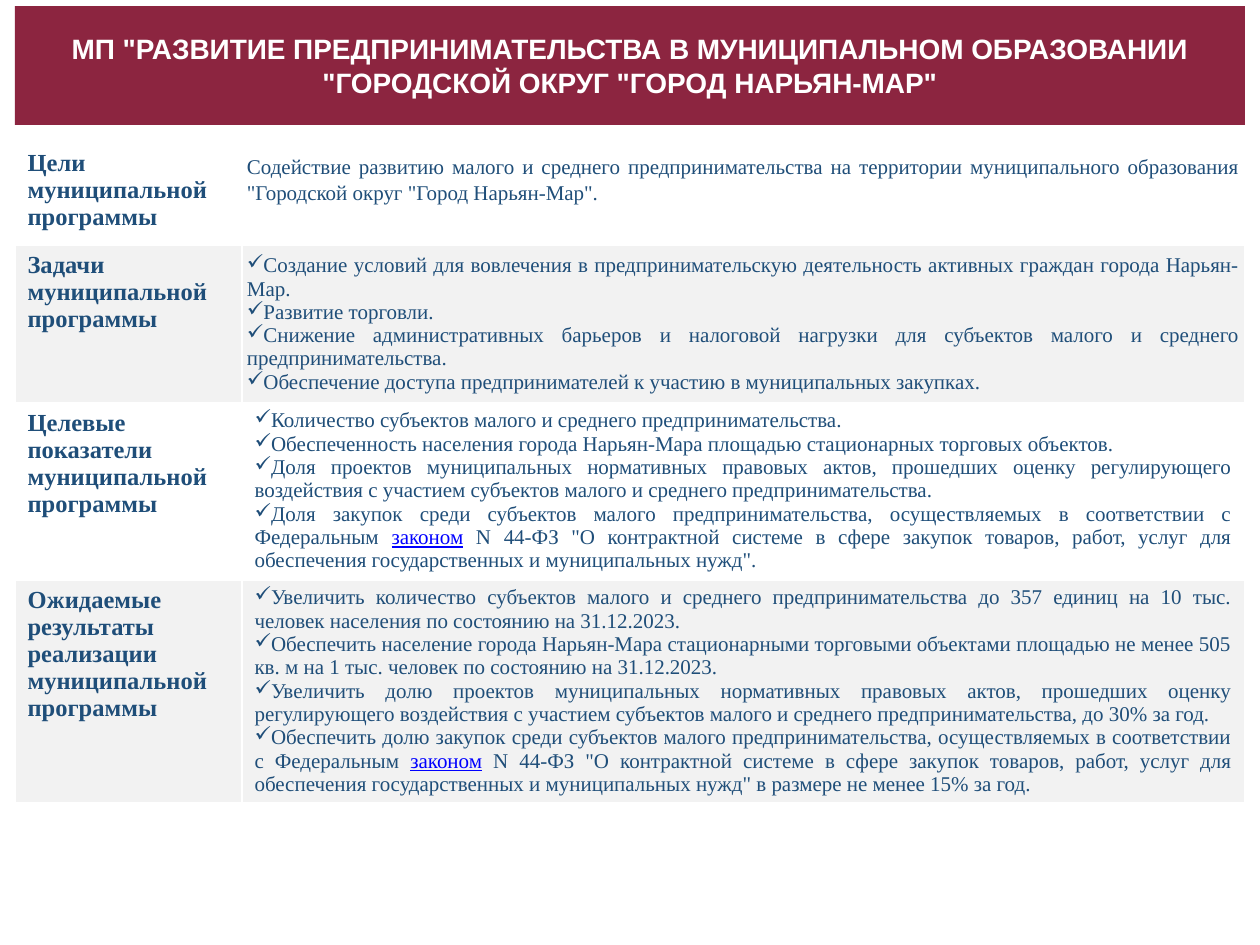
from lxml.etree import SubElement
from pptx import Presentation
from pptx.dml.color import RGBColor
from pptx.enum.shapes import MSO_SHAPE
from pptx.enum.text import MSO_ANCHOR, PP_ALIGN
from pptx.oxml import parse_xml
from pptx.oxml.ns import nsdecls, qn
from pptx.util import Pt

PX = 914400 / 126

WHITE = RGBColor(0xFF, 0xFF, 0xFF)
GREY = RGBColor(0xF2, 0xF2, 0xF2)
BURGUNDY = RGBColor(0x8C, 0x25, 0x40)
NAVY = RGBColor(0x1F, 0x4E, 0x79)
LINK_BLUE = RGBColor(0x00, 0x00, 0xFF)

TITLE_FONT = {"name": "Arial", "size": Pt(16), "bold": True}
HEADING_FONT = {"name": "Times New Roman", "size": Pt(14), "bold": True}
BODY_FONT = {"name": "Times New Roman", "size": Pt(12), "bold": False}

TITLE = ('МП "РАЗВИТИЕ ПРЕДПРИНИМАТЕЛЬСТВА В МУНИЦИПАЛЬНОМ ОБРАЗОВАНИИ '
         '"ГОРОДСКОЙ ОКРУГ "ГОРОД НАРЬЯН-МАР"')
LINK = "законом"
LAW = ('N 44-ФЗ "О контрактной системе в сфере закупок товаров, работ, услуг '
       'для обеспечения государственных и муниципальных нужд"')
PURCHASES = ("закупок среди субъектов малого предпринимательства, "
             f"осуществляемых в соответствии с Федеральным {LINK} {LAW}")

NARROW_MARGINS = {"margin_left": 5, "margin_right": 5,
                  "margin_top": 9, "margin_bottom": 9}

# Each row: heading, height, cell margins, line spacing, bulleted, paragraphs
ROWS = [
    ("Цели муниципальной программы", 102, NARROW_MARGINS, 1.15, False, [
        "Содействие развитию малого и среднего предпринимательства на территории "
        'муниципального образования "Городской округ "Город Нарьян-Мар".',
    ]),
    ("Задачи муниципальной программы", 157, NARROW_MARGINS, None, True, [
        "Создание условий для вовлечения в предпринимательскую деятельность "
        "активных граждан города Нарьян-Мар.",
        "Развитие торговли.",
        "Снижение административных барьеров и налоговой нагрузки для субъектов "
        "малого и среднего предпринимательства.",
        "Обеспечение доступа предпринимателей к участию в муниципальных закупках.",
    ]),
    ("Целевые показатели муниципальной программы", 177, {}, None, True, [
        "Количество субъектов малого и среднего предпринимательства.",
        "Обеспеченность населения города Нарьян-Мара площадью стационарных "
        "торговых объектов.",
        "Доля проектов муниципальных нормативных правовых актов, прошедших оценку "
        "регулирующего воздействия с участием субъектов малого и среднего "
        "предпринимательства.",
        f"Доля {PURCHASES}.",
    ]),
    ("Ожидаемые результаты реализации муниципальной программы", 221, {}, None, True, [
        "Увеличить количество субъектов малого и среднего предпринимательства до "
        "357 единиц на 10 тыс. человек населения по состоянию на 31.12.2023.",
        "Обеспечить население города Нарьян-Мара стационарными торговыми объектами "
        "площадью не менее 505 кв. м на 1 тыс. человек по состоянию на 31.12.2023.",
        "Увеличить долю проектов муниципальных нормативных правовых актов, "
        "прошедших оценку регулирующего воздействия с участием субъектов малого и "
        "среднего предпринимательства, до 30% за год.",
        f"Обеспечить долю {PURCHASES} в размере не менее 15% за год.",
    ]),
]


def px(length):
    return round(length * PX)


def add_run(paragraph, text, font_format, color):
    run = paragraph.add_run()
    run.text = text
    for name, value in font_format.items():
        setattr(run.font, name, value)
    run.font.color.rgb = color
    return run


def add_body_text(paragraph, text):
    before, link, after = text.partition(LINK)
    add_run(paragraph, before, BODY_FONT, NAVY)
    if link:
        add_run(paragraph, link, {**BODY_FONT, "underline": True}, LINK_BLUE)
        add_run(paragraph, after, BODY_FONT, NAVY)


def add_check_bullet(paragraph):
    properties = paragraph._p.get_or_add_pPr()
    properties.set("marL", "0")
    properties.set("indent", "0")
    SubElement(properties, qn("a:buChar")).set("char", "✓")


def style_cell(cell, color):
    cell.fill.solid()
    cell.fill.fore_color.rgb = color
    properties = cell._tc.get_or_add_tcPr()
    for position, side in enumerate("LRTB"):
        properties.insert(position, parse_xml(
            f'<a:ln{side} {nsdecls("a")} w="12700"><a:solidFill>'
            f'<a:srgbClr val="{WHITE}"/></a:solidFill></a:ln{side}>'))


def add_title_banner(slide, left, top, width, height):
    banner = slide.shapes.add_shape(
        MSO_SHAPE.RECTANGLE, px(left), px(top), px(width), px(height))
    banner.shadow.inherit = False
    banner.fill.solid()
    banner.fill.fore_color.rgb = BURGUNDY
    banner.line.fill.background()
    frame = banner.text_frame
    frame.word_wrap = True
    frame.vertical_anchor = MSO_ANCHOR.MIDDLE
    paragraph = frame.paragraphs[0]
    paragraph.alignment = PP_ALIGN.CENTER
    add_run(paragraph, TITLE, TITLE_FONT, WHITE)


def add_programme_table(slide, left, top, width, heading_width):
    height = sum(row[1] for row in ROWS)
    table = slide.shapes.add_table(
        len(ROWS), 2, px(left), px(top), px(width), px(height)).table
    table.first_row = table.horz_banding = False
    table.columns[0].width = px(heading_width)
    table.columns[1].width = px(width - heading_width)

    for index, (heading, row_height, margins, spacing, bulleted, texts) in enumerate(ROWS):
        table.rows[index].height = px(row_height)
        heading_cell, body_cell = table.cell(index, 0), table.cell(index, 1)
        for cell in (heading_cell, body_cell):
            style_cell(cell, GREY if index % 2 else WHITE)

        # Heading column
        add_run(heading_cell.text_frame.paragraphs[0], heading, HEADING_FONT, NAVY)

        # Description column
        for name, value in margins.items():
            setattr(body_cell, name, px(value))
        frame = body_cell.text_frame
        for number, text in enumerate(texts):
            paragraph = frame.add_paragraph() if number else frame.paragraphs[0]
            paragraph.alignment = PP_ALIGN.JUSTIFY
            if spacing:
                paragraph.line_spacing = spacing
            if bulleted:
                add_check_bullet(paragraph)
            add_body_text(paragraph, text)


def main():
    presentation = Presentation()
    presentation.slide_width = px(1260)
    presentation.slide_height = px(945)
    slide = presentation.slides.add_slide(presentation.slide_layouts[6])
    add_programme_table(slide, left=15, top=143, width=1230, heading_width=227)
    add_title_banner(slide, left=15, top=6, width=1230, height=119)
    presentation.save("out.pptx")


if __name__ == "__main__":
    main()
